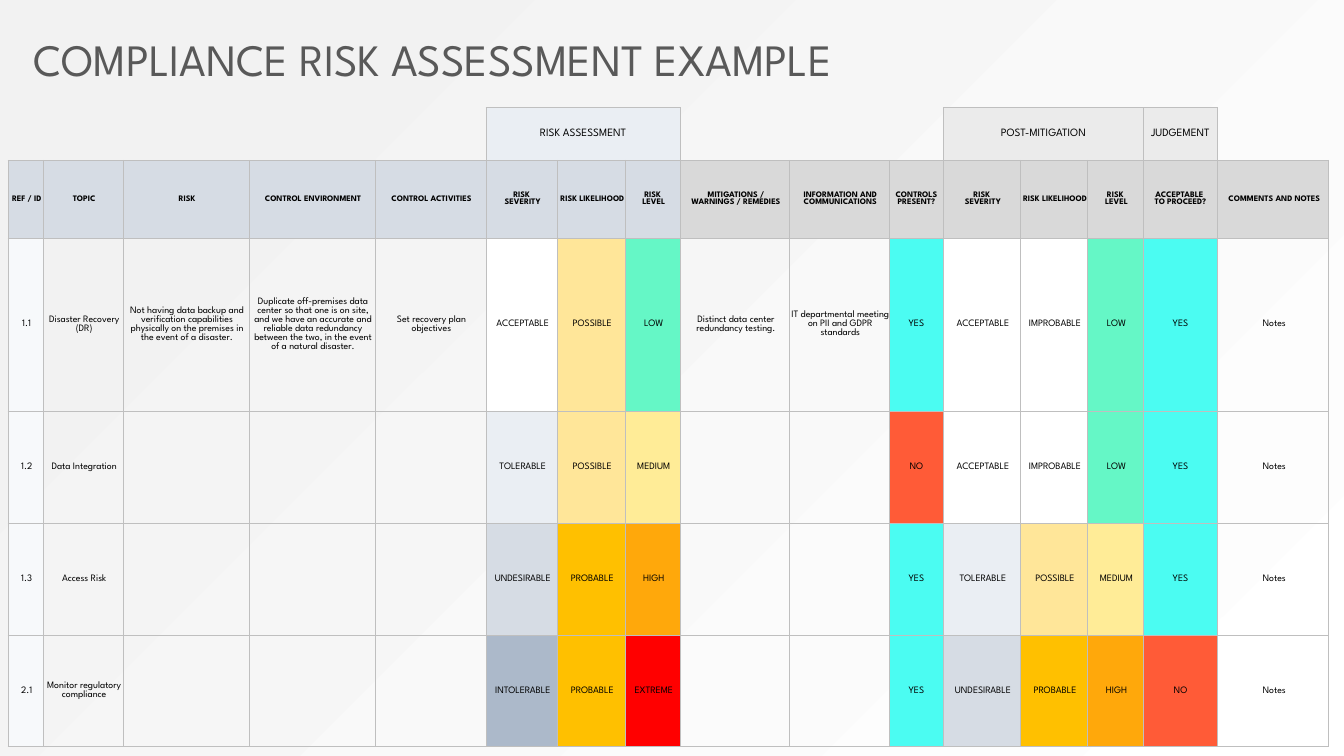
"""Build the compliance risk assessment slide."""
from lxml.etree import SubElement
from pptx import Presentation
from pptx.dml.color import RGBColor
from pptx.enum.text import MSO_ANCHOR as Anchor, PP_ALIGN as Align
from pptx.oxml.ns import qn
from pptx.util import Inches, Pt

TITLE = "COMPLIANCE RISK ASSESSMENT EXAMPLE"
FONT = "League Spartan"
NO_GRID_STYLE = "{2D5ABB26-0587-4C30-8999-92F81FD0307C}"
COLORS = {
    "title": "595959", "text": "000000", "border": "BFBFBF",
    "light": "FFFFFF", "shade": "F2F2F2", "ref": "F7F9FB",
    "before": "D6DCE4", "after": "D9D9D9",
    "before group": "EAEEF3", "after group": "EBEBEB",
}
RATING_COLORS = {
    "ACCEPTABLE": "FFFFFF", "TOLERABLE": "EAEEF3", "UNDESIRABLE": "D6DCE4", "INTOLERABLE": "ACB9CA",
    "IMPROBABLE": "FFFFFF", "POSSIBLE": "FFE699", "PROBABLE": "FFC000",
    "LOW": "65F7C6", "MEDIUM": "FFEC97", "HIGH": "FFA80B", "EXTREME": "FF0000",
    "YES": "4BFCF2", "NO": "FF5B37",
}
GROUPS = [
    ("RISK ASSESSMENT", 5, 7, "before group"),
    ("POST-MITIGATION", 11, 13, "after group"),
    ("JUDGEMENT", 14, 14, "after group"),
]
COLUMNS = [
    ("REF / ID", 0.35), ("TOPIC", 0.79), ("RISK", 1.25), ("CONTROL ENVIRONMENT", 1.25),
    ("CONTROL ACTIVITIES", 1.1), ("RISK \nSEVERITY", 0.71), ("RISK LIKELIHOOD", 0.67),
    ("RISK \nLEVEL", 0.55), ("MITIGATIONS / WARNINGS / REMEDIES", 1.08),
    ("INFORMATION AND COMMUNICATIONS", 0.99), ("CONTROLS PRESENT?", 0.54),
    ("RISK \nSEVERITY", 0.76), ("RISK LIKELIHOOD", 0.67), ("RISK \nLEVEL", 0.55),
    ("ACCEPTABLE \nTO PROCEED?", 0.74), ("COMMENTS AND NOTES", 1.1),
]
FIRST_AFTER_COLUMN = 8
UNPADDED_COLUMNS = (10, 14)
ROW_HEIGHTS = [0.52, 0.77, 1.72, 1.11, 1.11, 1.11]
RISKS = [
    ["1.1", "Disaster Recovery (DR)",
     "Not having data backup and verification capabilities physically on the premises "
     "in the event of a disaster.",
     "Duplicate off-premises data center so that one is on site, and we have an accurate and "
     "reliable data redundancy between the two, in the event of a natural disaster.",
     "Set recovery plan objectives", "ACCEPTABLE", "POSSIBLE", "LOW",
     "Distinct data center redundancy testing.",
     "IT departmental meeting on PII and GDPR standards",
     "YES", "ACCEPTABLE", "IMPROBABLE", "LOW", "YES", "Notes"],
    ["1.2", "Data Integration", "", "", "", "TOLERABLE", "POSSIBLE", "MEDIUM", "", "",
     "NO", "ACCEPTABLE", "IMPROBABLE", "LOW", "YES", "Notes"],
    ["1.3", "Access Risk", "", "", "", "UNDESIRABLE", "PROBABLE", "HIGH", "", "",
     "YES", "TOLERABLE", "POSSIBLE", "MEDIUM", "YES", "Notes"],
    ["2.1", "Monitor regulatory compliance", "", "", "", "INTOLERABLE", "PROBABLE", "EXTREME", "", "",
     "YES", "UNDESIRABLE", "PROBABLE", "HIGH", "NO", "Notes"],
]


def add_text(paragraph, text, size, color, bold=False):
    for index, line in enumerate(text.split("\n")):
        if index:
            paragraph.add_line_break()
        run = paragraph.add_run()
        run.text = line
        run.font.name = FONT
        run.font.size = Pt(size)
        run.font.bold = bold
        run.font.color.rgb = RGBColor.from_string(COLORS[color])


def add_borders(cell, sides="LRTB", top=0.5):
    properties = cell._tc.get_or_add_tcPr()
    for side in sides:
        width = top if side == "T" else 0.5
        line = SubElement(properties, qn(f"a:ln{side}"), w=str(Pt(width)))
        fill = SubElement(line, qn("a:solidFill"))
        SubElement(fill, qn("a:srgbClr"), val=COLORS["border"])


def fill_cell(cell, color):
    if color:
        cell.fill.solid()
        cell.fill.fore_color.rgb = RGBColor.from_string(color)
    else:
        cell.fill.background()


def write_cell(cell, text, size, bold=False, left=0):
    cell.vertical_anchor = Anchor.MIDDLE
    cell.margin_left = Inches(left)
    cell.margin_right = cell.margin_top = cell.margin_bottom = 0
    paragraph = cell.text_frame.paragraphs[0]
    paragraph.alignment = Align.CENTER
    if text:
        add_text(paragraph, text, size, "text", bold)


def add_background(slide):
    fill = slide.background.fill
    fill.gradient()
    fill.gradient_angle = 135
    for stop, color, position in zip(fill.gradient_stops, ("light", "shade"), (0, 0.87)):
        stop.color.rgb = RGBColor.from_string(COLORS[color])
        stop.position = position


def add_title(slide):
    box = slide.shapes.add_textbox(Inches(0.23), Inches(0.27), Inches(9.06), Inches(0.64))
    box.text_frame.word_wrap = False
    add_text(box.text_frame.paragraphs[0], TITLE, 32, "title")


def add_risk_table(slide):
    frame = slide.shapes.add_table(len(ROW_HEIGHTS), len(COLUMNS), Inches(0.08), Inches(1.07),
                                   Inches(13.12), Inches(6.34))
    table = frame.table
    table.first_row = table.horz_banding = False
    table._tbl.tblPr.find(qn("a:tableStyleId")).text = NO_GRID_STYLE
    for column, (_, width) in zip(table.columns, COLUMNS):
        column.width = Inches(width)
    for row, height in zip(table.rows, ROW_HEIGHTS):
        row.height = Inches(height)

    grouped = {index for _, first, last, _ in GROUPS for index in range(first, last + 1)}
    for index in range(len(COLUMNS)):
        cell = table.cell(0, index)
        if index in grouped:
            add_borders(cell, top=1)
        else:
            add_borders(cell, "B")
            fill_cell(cell, None)
    for name, first, last, color in GROUPS:
        cell = table.cell(0, first)
        if last > first:
            cell.merge(table.cell(0, last))
        fill_cell(cell, COLORS[color])
        write_cell(cell, name, 8)

    headings = [name for name, _ in COLUMNS]
    for row_index, values in enumerate([headings] + RISKS, start=1):
        heading = row_index == 1
        for index, text in enumerate(values):
            cell = table.cell(row_index, index)
            if heading:
                color = COLORS["before" if index < FIRST_AFTER_COLUMN else "after"]
            elif index == 0:
                color = COLORS["ref"]
            else:
                color = RATING_COLORS.get(text)
            add_borders(cell)
            fill_cell(cell, color)
            left = 0 if index in UNPADDED_COLUMNS else 0.02
            write_cell(cell, text, 6 if heading else 7, heading, left)


def main():
    presentation = Presentation()
    presentation.slide_width = Inches(13.33)
    presentation.slide_height = Inches(7.5)
    slide = presentation.slides.add_slide(presentation.slide_layouts[6])
    add_background(slide)
    add_risk_table(slide)
    add_title(slide)
    presentation.save("out.pptx")


if __name__ == "__main__":
    main()
